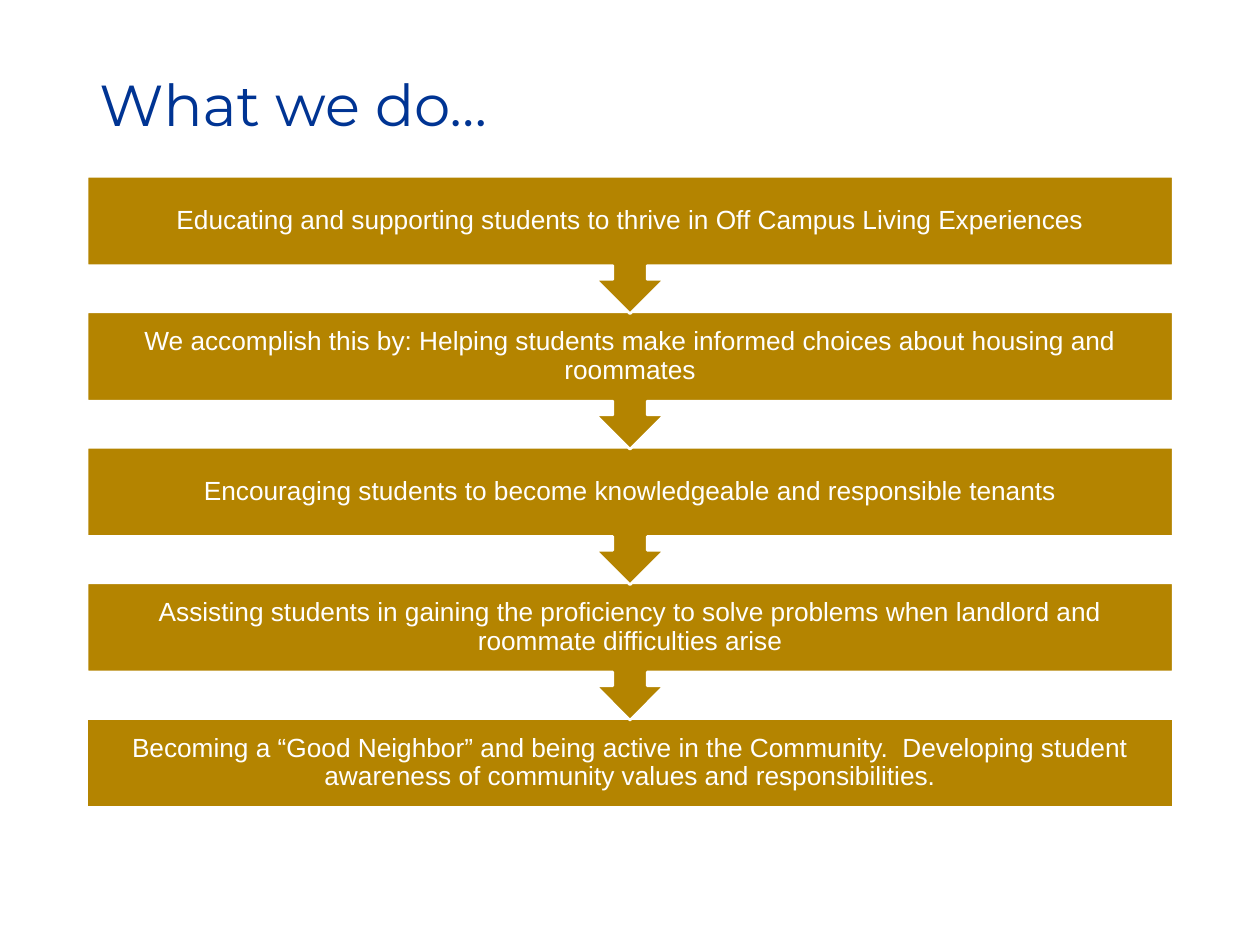
from dataclasses import dataclass

from pptx import Presentation
from pptx import util as u
from pptx.dml.color import RGBColor
from pptx.enum import shapes, text

EMU_PER_PX = 4572  # 200 px to the inch


def px(n):
    return u.Emu(n * EMU_PER_PX)


@dataclass(frozen=True)
class Theme:
    blue: str = "003493"
    gold: str = "B48400"
    white: str = "FFFFFF"
    title_font: str = "Montserrat"
    body_font: str = "Arial"
    title_size: int = 33
    body_size: int = 15
    outline: float = 1.5


STEPS = [
    "Educating and supporting students to thrive in Off Campus Living Experiences",
    "We accomplish this by: Helping students make informed choices about housing and roommates",
    "Encouraging students to become knowledgeable and responsible tenants",
    "Assisting students in gaining the proficiency to solve problems when landlord and "
    "roommate difficulties arise",
    "Becoming a “Good Neighbor” and being active in the Community.  Developing student "
    "awareness of community values and responsibilities.",
]
LEFT, WIDTH = 138, 1724
FIRST_TOP, PITCH = 280, 215
BAR_HEIGHT, CALLOUT_HEIGHT = 142, 218
INSET = 24


class Deck:
    def __init__(self, slide, theme):
        self.s, self.theme = slide, theme

    def set_text(self, tf, words, font, size, color, align):
        tf.word_wrap = True
        p = tf.paragraphs[0]
        p.text = words
        p.alignment = align
        p.line_spacing = 0.9
        p.font.name = font
        p.font.size = u.Pt(size)
        p.font.color.rgb = RGBColor.from_string(color)

    def title(self, words, left, top, width, height):
        tf = self.s.shapes.add_textbox(px(left), px(top), px(width), px(height)).text_frame
        tf.vertical_anchor = text.MSO_ANCHOR.TOP
        t = self.theme
        self.set_text(tf, words, t.title_font, t.title_size, t.blue, text.PP_ALIGN.LEFT)

    def step(self, words, kind, left, top, width, height):
        t = self.theme
        sp = self.s.shapes.add_shape(kind, px(left), px(top), px(width), px(height))
        sp.shadow.inherit = False
        sp.fill.solid()
        sp.fill.fore_color.rgb = RGBColor.from_string(t.gold)
        sp.line.color.rgb = RGBColor.from_string(t.white)
        sp.line.width = u.Pt(t.outline)
        tf = sp.text_frame
        tf.margin_left = tf.margin_right = tf.margin_top = tf.margin_bottom = px(INSET)
        tf.vertical_anchor = text.MSO_ANCHOR.MIDDLE
        self.set_text(tf, words, t.body_font, t.body_size, t.white, text.PP_ALIGN.CENTER)


def main():
    prs = Presentation()
    prs.slide_width, prs.slide_height = px(2000), px(1500)
    deck = Deck(prs.slides.add_slide(prs.slide_layouts[6]), Theme())
    deck.title("What we do…", LEFT, 112, WIDTH, 168)

    # Bottom step first, so that each arrow tip lies over the bar below it.
    last = len(STEPS) - 1
    for i in range(last, -1, -1):
        if i == last:
            kind, height = shapes.MSO_SHAPE.RECTANGLE, BAR_HEIGHT
        else:
            kind, height = shapes.MSO_SHAPE.DOWN_ARROW_CALLOUT, CALLOUT_HEIGHT
        deck.step(STEPS[i], kind, LEFT, FIRST_TOP + i * PITCH, WIDTH, height)

    prs.save("out.pptx")


if __name__ == "__main__":
    main()
